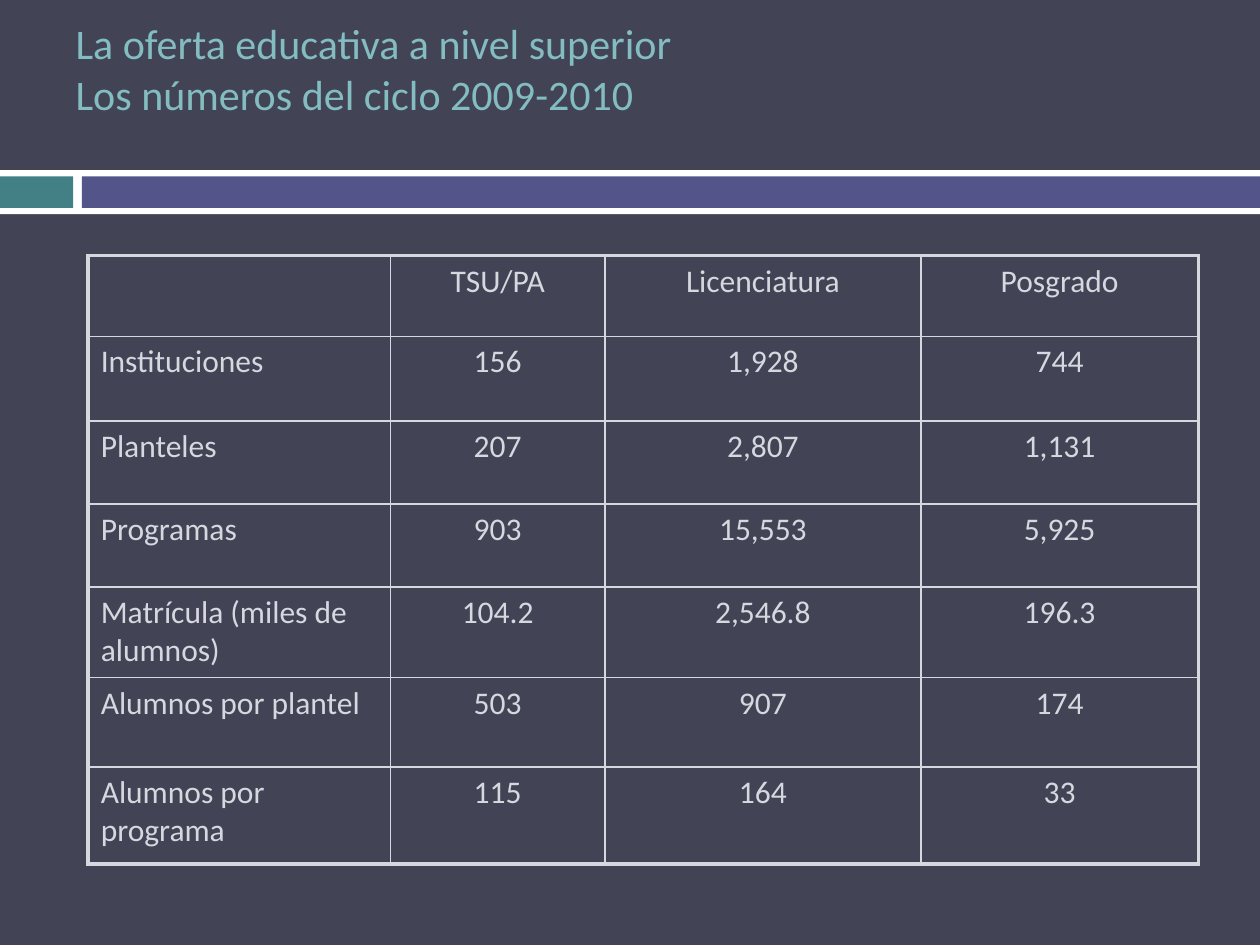
from lxml import etree
from pptx import Presentation
from pptx.dml.color import RGBColor
from pptx.enum.shapes import MSO_SHAPE
from pptx.enum.text import MSO_ANCHOR, MSO_AUTO_SIZE, PP_ALIGN
from pptx.oxml.ns import qn
from pptx.util import Inches, Pt

RECT = MSO_SHAPE.RECTANGLE
MIDDLE = MSO_ANCHOR.MIDDLE
NO_FIT = MSO_AUTO_SIZE.NONE
LEFT, CENTER = PP_ALIGN.LEFT, PP_ALIGN.CENTER

FONT = "Calibri"
COLORS = {
    "back": "424456",
    "white": "FFFFFF",
    "teal": "438086",
    "violet": "53548A",
    "title": "83BCC1",
    "text": "D6D7DF",
}
BARS = [
    ("white", 0, 1.35, 10, 0.35),
    ("teal", 0, 1.4, 0.58, 0.25),
    ("violet", 0.65, 1.4, 9.35, 0.25),
]
TITLE = ["La oferta educativa a nivel superior", "Los números del ciclo 2009-2010"]
COLS = [2.4, 1.7, 2.51, 2.2]
ROWS = [0.64, 0.67, 0.66, 0.66, 0.72, 0.71, 0.77]
DATA = [
    ["", "TSU/PA", "Licenciatura", "Posgrado"],
    ["Instituciones", "156", "1,928", "744"],
    ["Planteles", "207", "2,807", "1,131"],
    ["Programas", "903", "15,553", "5,925"],
    ["Matrícula (miles de alumnos)", "104.2", "2,546.8", "196.3"],
    ["Alumnos por plantel", "503", "907", "174"],
    ["Alumnos por programa", "115", "164", "33"],
]
THIN, THICK = 1, 2.25


def color(name):
    return RGBColor.from_string(COLORS[name])


def add_run(para, text, size, tint):
    run = para.add_run()
    run.text = text
    run.font.name = FONT
    run.font.size = Pt(size)
    run.font.bold = False
    run.font.color.rgb = color(tint)


def add_bar(slide, tint, *box):
    bar = slide.shapes.add_shape(RECT, *map(Inches, box))
    bar.shadow.inherit = False
    bar.fill.solid()
    bar.fill.fore_color.rgb = color(tint)
    bar.line.fill.background()


def set_title(slide):
    title = slide.shapes.title
    title.left, title.top = Inches(0.5), Inches(0.28)
    title.width, title.height = Inches(9.19), Inches(0.87)
    frame = title.text_frame
    frame.word_wrap = True
    frame.auto_size = NO_FIT
    frame.vertical_anchor = MIDDLE
    frame.margin_bottom = Inches(0.4)
    para = frame.paragraphs[0]
    para.alignment = LEFT
    para.line_spacing = 1.0
    for i, line in enumerate(TITLE):
        if i:
            para.add_line_break()
        add_run(para, line, 24, "title")


def set_edges(cell, row, col):
    outer = {
        "a:lnL": col == 0,
        "a:lnR": col == len(COLS) - 1,
        "a:lnT": row == 0,
        "a:lnB": row == len(ROWS) - 1,
    }
    props = cell._tc.get_or_add_tcPr()
    for i, (tag, edge) in enumerate(outer.items()):
        line = etree.Element(qn(tag), w=str(Pt(THICK if edge else THIN)))
        fill = etree.SubElement(line, qn("a:solidFill"))
        etree.SubElement(fill, qn("a:srgbClr"), val=COLORS["text"])
        props.insert(i, line)


def add_grid(slide):
    box = map(Inches, (0.7, 2.03, sum(COLS), sum(ROWS)))
    table = slide.shapes.add_table(len(ROWS), len(COLS), *box).table
    table.first_row = False
    table.horz_banding = False
    for col, width in zip(table.columns, COLS):
        col.width = Inches(width)
    for row, height in zip(table.rows, ROWS):
        row.height = Inches(height)
    for r, line in enumerate(DATA):
        for c, text in enumerate(line):
            cell = table.cell(r, c)
            cell.fill.background()
            set_edges(cell, r, c)
            para = cell.text_frame.paragraphs[0]
            para.alignment = CENTER if c else LEFT
            if text:
                add_run(para, text, 18, "text")


def main():
    deck = Presentation()
    deck.slide_width, deck.slide_height = Inches(10), Inches(7.5)
    slide = deck.slides.add_slide(deck.slide_layouts[5])
    slide.background.fill.solid()
    slide.background.fill.fore_color.rgb = color("back")
    for bar in BARS:
        add_bar(slide, *bar)
    set_title(slide)
    add_grid(slide)
    deck.save("out.pptx")


if __name__ == "__main__":
    main()
